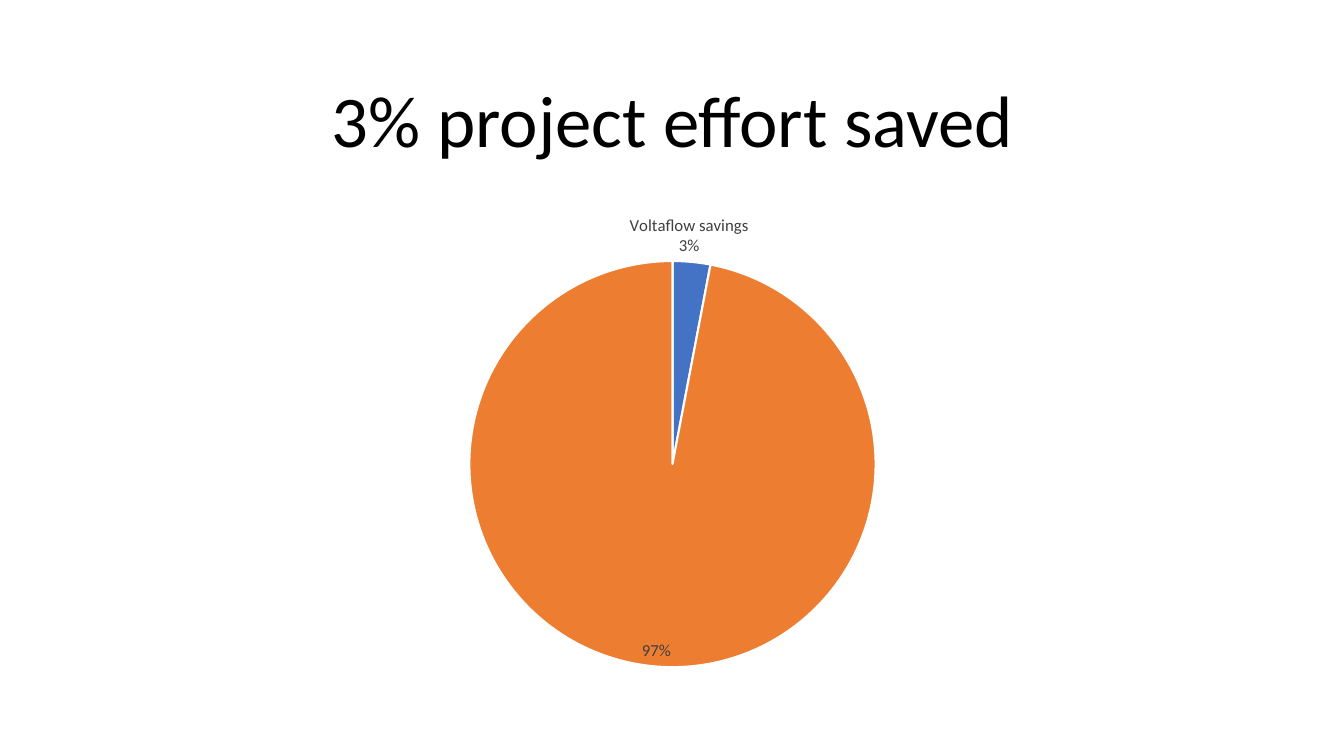
from lxml.etree import SubElement
from pptx import Presentation
from pptx.chart.data import CategoryChartData
from pptx.dml.color import RGBColor
from pptx.enum.chart import XL_CHART_TYPE, XL_LABEL_POSITION
from pptx.enum.text import MSO_ANCHOR, MSO_AUTO_SIZE, PP_ALIGN
from pptx.oxml.ns import qn
from pptx.util import Pt

PX = 9144  # EMU, 100 px to the inch
FONT = "Calibri"
# category, value, fill, label position, label shift in px, label names the category
SLICES = [
    ("Voltaflow savings", 3, "4472C4", XL_LABEL_POSITION.OUTSIDE_END, -62, True),
    ("", 97, "ED7D31", XL_LABEL_POSITION.INSIDE_END, -12, False),
]


def rgb(code):
    return RGBColor.from_string(code)


def apply(target, settings):
    for key, value in settings.items():
        setattr(target, key, value)


def style_font(font, size, color):
    apply(font, {"name": FONT, "size": Pt(size), "bold": False})
    font.color.rgb = rgb(color)


def place_title(slide, box, wording):
    title = slide.shapes.title
    apply(title, dict(zip(("left", "top", "width", "height"), (n * PX for n in box))))
    frame = title.text_frame
    frame.text = wording
    apply(frame, {"auto_size": MSO_AUTO_SIZE.NONE, "word_wrap": True,
                  "vertical_anchor": MSO_ANCHOR.MIDDLE})
    heading = frame.paragraphs[0]
    apply(heading, {"alignment": PP_ALIGN.CENTER, "line_spacing": 0.9})
    style_font(heading.runs[0].font, 52, "000000")


def set_layout(parent, index, settings):
    """Give a chart part a manual layout, as the child at `index`."""
    layout = parent.find(qn("c:layout"))
    if layout is None:
        layout = SubElement(parent, qn("c:layout"))
        parent.insert(index, layout)
    manual = SubElement(layout, qn("c:manualLayout"))
    for tag, value in settings.items():
        SubElement(manual, qn(f"c:{tag}")).set("val", str(value))


def fix_plot(chart, box, diameter, drop):
    """Set the pie's square, centred across the box and `drop` px below its top."""
    _, _, width, height = box
    set_layout(chart.plots[0]._element.getparent(), 0, {
        "layoutTarget": "inner", "xMode": "edge", "yMode": "edge",
        "x": (width - diameter) / 2 / width, "y": drop / height,
        "w": diameter / width, "h": diameter / height,
    })


def label_slice(point, position, shift, named):
    """Show the percentage, below the category where the slice is named.

    The label moves sideways by `shift`, a fraction of the chart width.
    """
    label = point.data_label
    style_font(label.font, 12, "404040")
    label.position = position
    entry = label._get_or_add_dLbl()
    for tag, shown in (("showVal", False), ("showCatName", named), ("showPercent", True)):
        entry.find(qn(f"c:{tag}")).set("val", str(int(shown)))
    SubElement(entry, qn("c:separator")).text = "\n"
    set_layout(entry, 1, {"x": shift, "y": 0})


def place_savings_pie(slide, box):
    savings = CategoryChartData()
    savings.categories = [category for category, *_ in SLICES]
    savings.add_series("Series 1", [value for _, value, *_ in SLICES])
    chart = slide.shapes.add_chart(
        XL_CHART_TYPE.PIE, *(n * PX for n in box), savings).chart
    apply(chart, {"has_legend": False, "has_title": False})
    style_font(chart.font, 10, "000000")
    pie = chart.plots[0]
    pie.vary_by_categories = True
    for index, (_, _, fill, position, shift, named) in enumerate(SLICES):
        point = pie.series[0].points[index]
        point.format.fill.solid()
        point.format.fill.fore_color.rgb = rgb(fill)
        point.format.line.color.rgb = rgb("FFFFFF")
        point.format.line.width = Pt(1.5)
        label_slice(point, position, shift / box[2], named)
    fix_plot(chart, box, diameter=403, drop=59)


def main():
    deck = Presentation()
    apply(deck, {"slide_width": 1333 * PX, "slide_height": 750 * PX})
    slide = deck.slides.add_slide(deck.slide_layouts.get_by_name("Title Only"))
    place_title(slide, (92, 61, 1150, 124), "3% project effort saved")
    place_savings_pie(slide, (92, 200, 1150, 476))
    deck.save("out.pptx")


if __name__ == "__main__":
    main()
